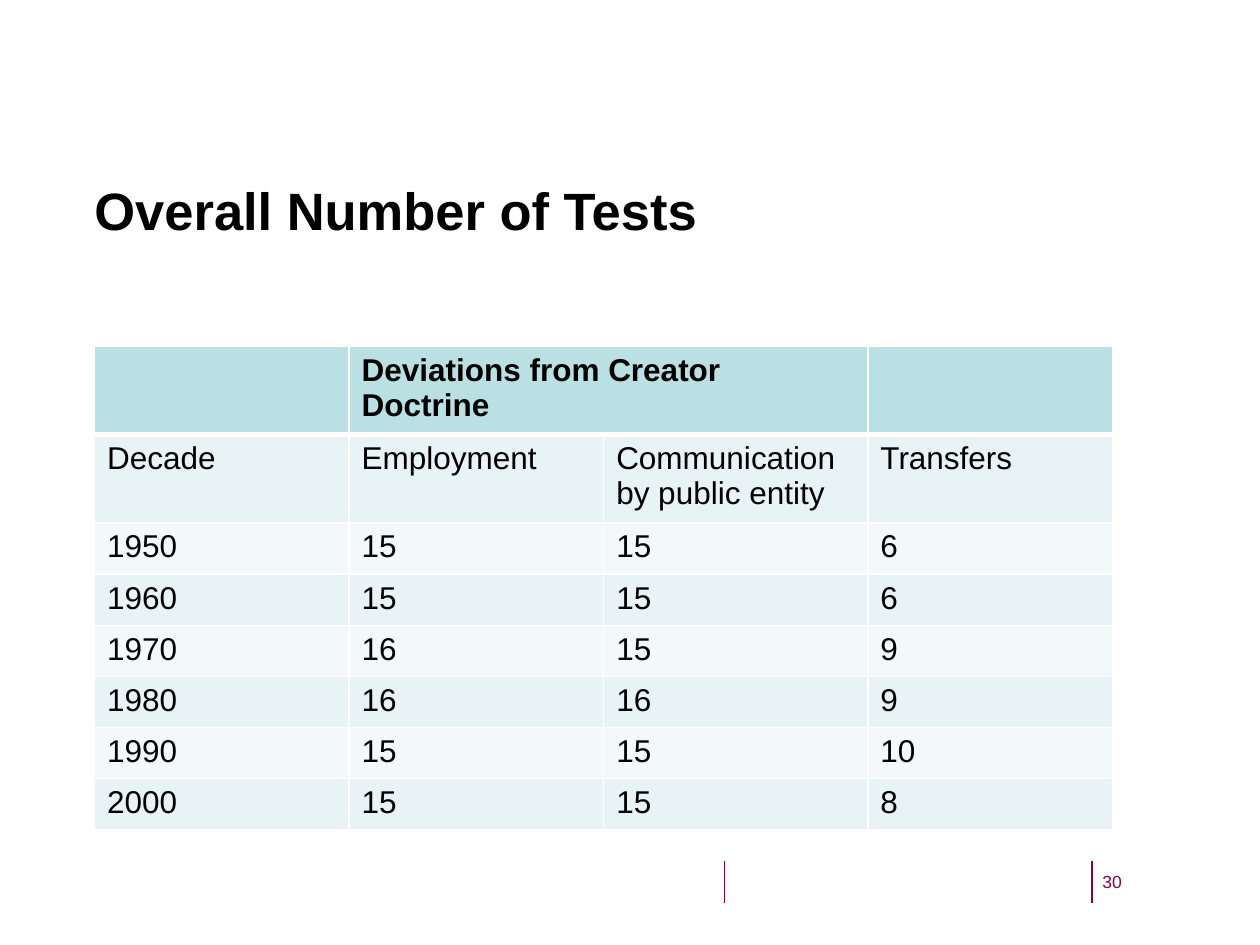
from lxml import etree
from pptx import Presentation
from pptx.dml.color import RGBColor
from pptx.enum import shapes, text
from pptx.oxml.ns import qn
from pptx.util import Pt

THEME = {
    "font": "Arial",
    "ink": "000000", "accent": "90003E", "border": "FFFFFF",
    "header": "BBE0E3", "bands": ("E7F3F4", "F3F9FA"),
    "title": 30, "body": 18, "number": 10,
}

TITLE = "Overall Number of Tests"
PAGE_NUMBER = "30"
ROWS = [
    ("", "Deviations from Creator Doctrine", "", ""),
    ("Decade", "Employment", "Communication by public entity", "Transfers"),
    ("1950", "15", "15", "6"),
    ("1960", "15", "15", "6"),
    ("1970", "16", "15", "9"),
    ("1980", "16", "16", "9"),
    ("1990", "15", "15", "10"),
    ("2000", "15", "15", "8"),
]
TABLE_LEFT, TABLE_TOP = 54, 198
COLUMN_WIDTHS = (145.5, 145.5, 151, 140)
ROW_HEIGHTS = [47.5] * 2 + [29.25] * (len(ROWS) - 2)
FOOTER_LINES = (414, 624)
FOOTER_TOP, FOOTER_BOTTOM = 492, 516


def write(frame, content, size, color=THEME["ink"], bold=False):
    frame.word_wrap = True
    paragraph = frame.paragraphs[0]
    paragraph.alignment = text.PP_ALIGN.LEFT
    font = paragraph.font
    if content:
        run = paragraph.add_run()
        run.text = content
        font = run.font
    font.name = THEME["font"]
    font.size = Pt(size)
    font.bold = bold
    font.color.rgb = RGBColor.from_string(color)


def add_text(slide, box, content, **style):
    frame = slide.shapes.add_textbox(*map(Pt, box)).text_frame
    frame.margin_left = frame.margin_top = 0
    frame.margin_right = frame.margin_bottom = 0
    frame.vertical_anchor = text.MSO_ANCHOR.TOP
    write(frame, content, **style)


def set_borders(cell, bottom_width, top_width):
    """Put the four border elements ahead of the cell's fill, as the schema asks."""
    properties = cell._tc.get_or_add_tcPr()
    widths = {"a:lnL": 1, "a:lnR": 1, "a:lnT": top_width, "a:lnB": bottom_width}
    for position, (tag, width) in enumerate(widths.items()):
        line = etree.Element(qn(tag), w=str(Pt(width)))
        fill = etree.SubElement(line, qn("a:solidFill"))
        etree.SubElement(fill, qn("a:srgbClr"), val=THEME["border"])
        properties.insert(position, line)


def add_test_table(slide):
    frame = slide.shapes.add_table(
        len(ROWS), len(COLUMN_WIDTHS), Pt(TABLE_LEFT), Pt(TABLE_TOP),
        Pt(sum(COLUMN_WIDTHS)), Pt(sum(ROW_HEIGHTS)))
    table = frame.table
    for column, width in zip(table.columns, COLUMN_WIDTHS):
        column.width = Pt(width)
    for row, height in zip(table.rows, ROW_HEIGHTS):
        row.height = Pt(height)
    table.cell(0, 1).merge(table.cell(0, 2))
    for i, values in enumerate(ROWS):
        header = i == 0
        color = THEME["header"] if header else THEME["bands"][(i - 1) % 2]
        for j, value in enumerate(values):
            cell = table.cell(i, j)
            cell.fill.solid()
            cell.fill.fore_color.rgb = RGBColor.from_string(color)
            set_borders(cell, 3 if header else 1, 3 if i == 1 else 1)
            write(cell.text_frame, value, THEME["body"], bold=header)


def add_footer_line(slide, x):
    line = slide.shapes.add_connector(
        shapes.MSO_CONNECTOR.STRAIGHT,
        Pt(x), Pt(FOOTER_TOP), Pt(x), Pt(FOOTER_BOTTOM))
    line.line.color.rgb = RGBColor.from_string(THEME["accent"])
    line.line.width = Pt(0.75)
    etree.SubElement(line._element.spPr, qn("a:effectLst"))


def main():
    presentation = Presentation()
    presentation.slide_width, presentation.slide_height = Pt(720), Pt(540)
    slide = presentation.slides.add_slide(presentation.slide_layouts[6])
    for x in FOOTER_LINES:
        add_footer_line(slide, x)
    add_text(slide, (54, 102, 582, 66), TITLE, size=THEME["title"], bold=True)
    add_test_table(slide)
    add_text(slide, (630, 498, 42, 31), PAGE_NUMBER,
             size=THEME["number"], color=THEME["accent"])
    presentation.save("out.pptx")


if __name__ == "__main__":
    main()
